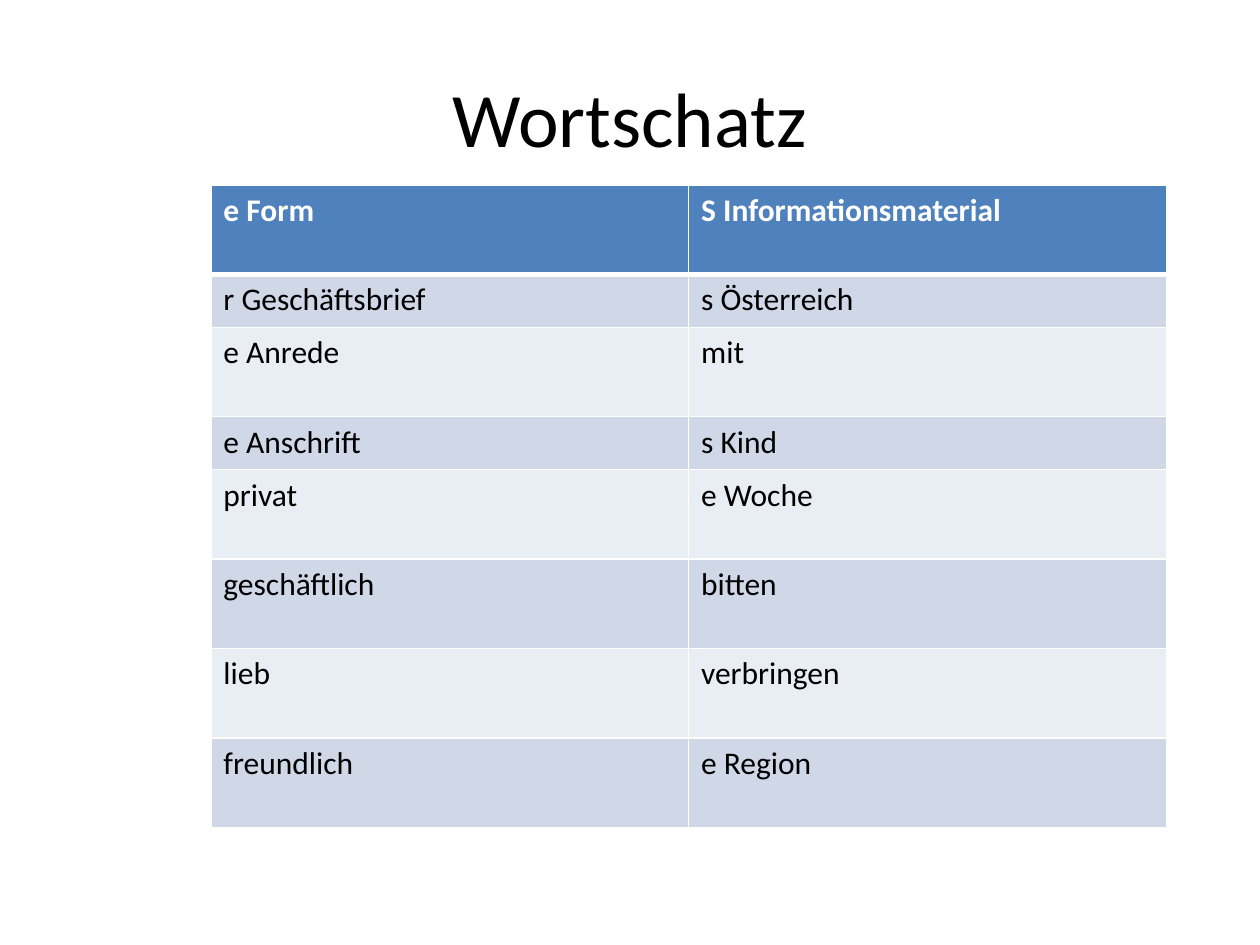
from lxml.etree import SubElement
from pptx import Presentation
from pptx.dml.color import RGBColor
from pptx.enum.text import MSO_ANCHOR, PP_ALIGN
from pptx.oxml.ns import qn
from pptx.util import Pt

COLORS = {
    "text": "000000",
    "header": "4F81BD",
    "band_dark": "D0D8E8",
    "band_light": "E9EDF4",
    "white": "FFFFFF",
}
TITLE_FONT = {"name": "Calibri", "size": Pt(44), "bold": False}
HEADER_FONT = {"name": "Calibri", "size": Pt(18), "bold": True}
BODY_FONT = {"name": "Calibri", "size": Pt(18), "bold": False}
TALL, SHORT = 51.1, 30.3
VOCABULARY = [
    ("e Form", "S Informationsmaterial", TALL),
    ("r Geschäftsbrief", "s Österreich", SHORT),
    ("e Anrede", "mit", TALL),
    ("e Anschrift", "s Kind", SHORT),
    ("privat", "e Woche", TALL),
    ("geschäftlich", "bitten", TALL),
    ("lieb", "verbringen", TALL),
    ("freundlich", "e Region", TALL),
]


def write_text(paragraph, text, font_values, color):
    run = paragraph.add_run()
    run.text = text
    for name, value in font_values.items():
        setattr(run.font, name, value)
    run.font.color.rgb = RGBColor.from_string(COLORS[color])


def add_border(cell, side, width):
    line = SubElement(cell._tc.get_or_add_tcPr(), qn(f"a:ln{side}"), w=str(Pt(width)))
    fill = SubElement(line, qn("a:solidFill"))
    SubElement(fill, qn("a:srgbClr"), val=COLORS["white"])


presentation = Presentation()
presentation.slide_width = Pt(720)
presentation.slide_height = Pt(540)
slide = presentation.slides.add_slide(presentation.slide_layouts[6])

title = slide.shapes.add_textbox(Pt(36), Pt(21.6), Pt(648), Pt(90))
for name, value in {"word_wrap": True, "vertical_anchor": MSO_ANCHOR.MIDDLE}.items():
    setattr(title.text_frame, name, value)
title_paragraph = title.text_frame.paragraphs[0]
title_paragraph.alignment = PP_ALIGN.CENTER
write_text(title_paragraph, "Wortschatz", TITLE_FONT, "text")

table_height = sum(height for *words, height in VOCABULARY)
table = slide.shapes.add_table(
    len(VOCABULARY), 2, Pt(120.5), Pt(105.7), Pt(546), Pt(table_height)
).table

for row_index, (*words, height) in enumerate(VOCABULARY):
    is_header = row_index == 0
    table.rows[row_index].height = Pt(height)
    if is_header:
        fill_color, text_color, font_values = "header", "white", HEADER_FONT
    else:
        fill_color = "band_dark" if row_index % 2 else "band_light"
        text_color, font_values = "text", BODY_FONT
    border_widths = {
        "L": 1,
        "R": 1,
        "T": 3 if row_index == 1 else 1,
        "B": 3 if is_header else 1,
    }
    for column_index, word in enumerate(words):
        cell = table.cell(row_index, column_index)
        for side, width in border_widths.items():
            add_border(cell, side, width)
        cell.fill.solid()
        cell.fill.fore_color.rgb = RGBColor.from_string(COLORS[fill_color])
        write_text(cell.text_frame.paragraphs[0], word, font_values, text_color)

presentation.save("out.pptx")
